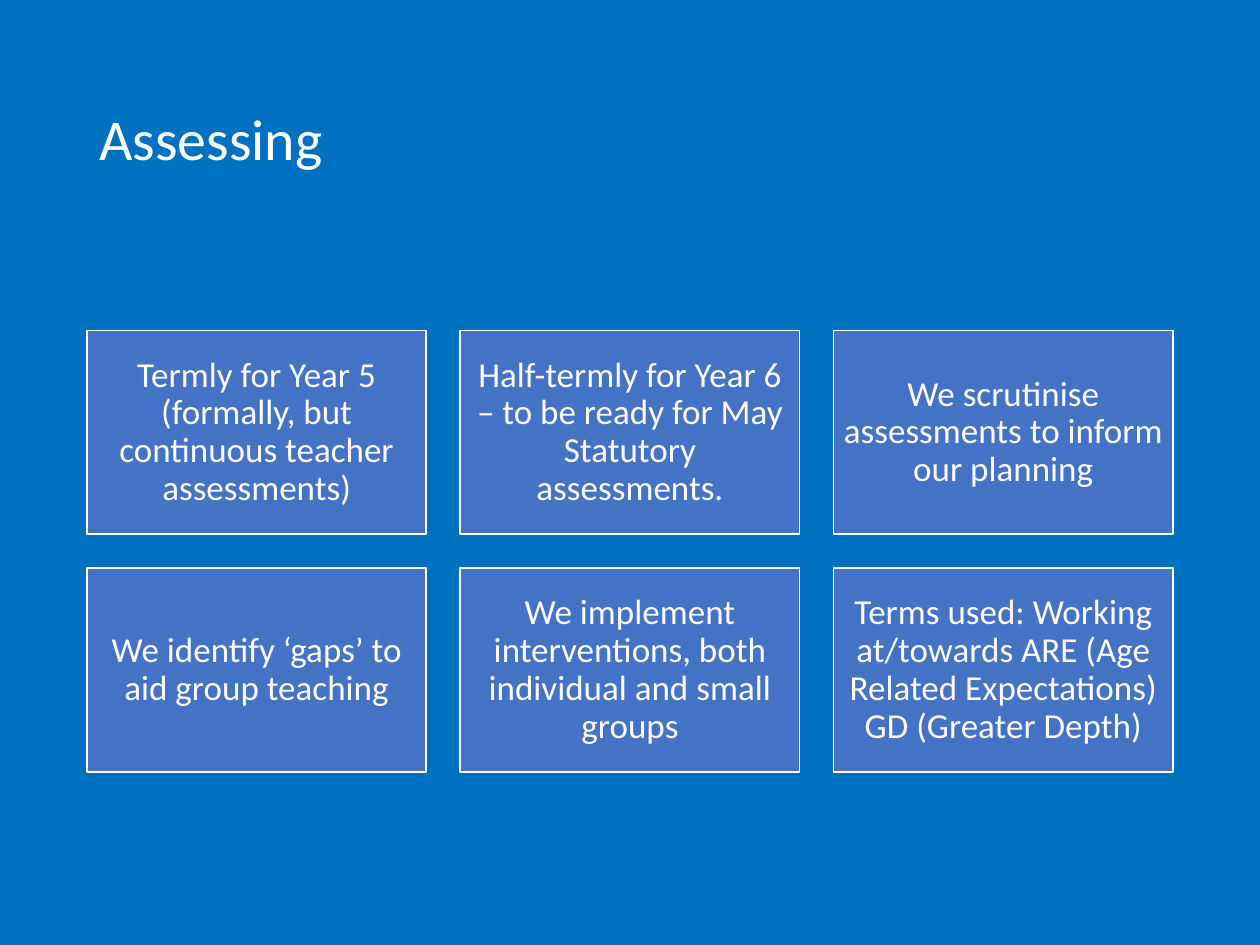
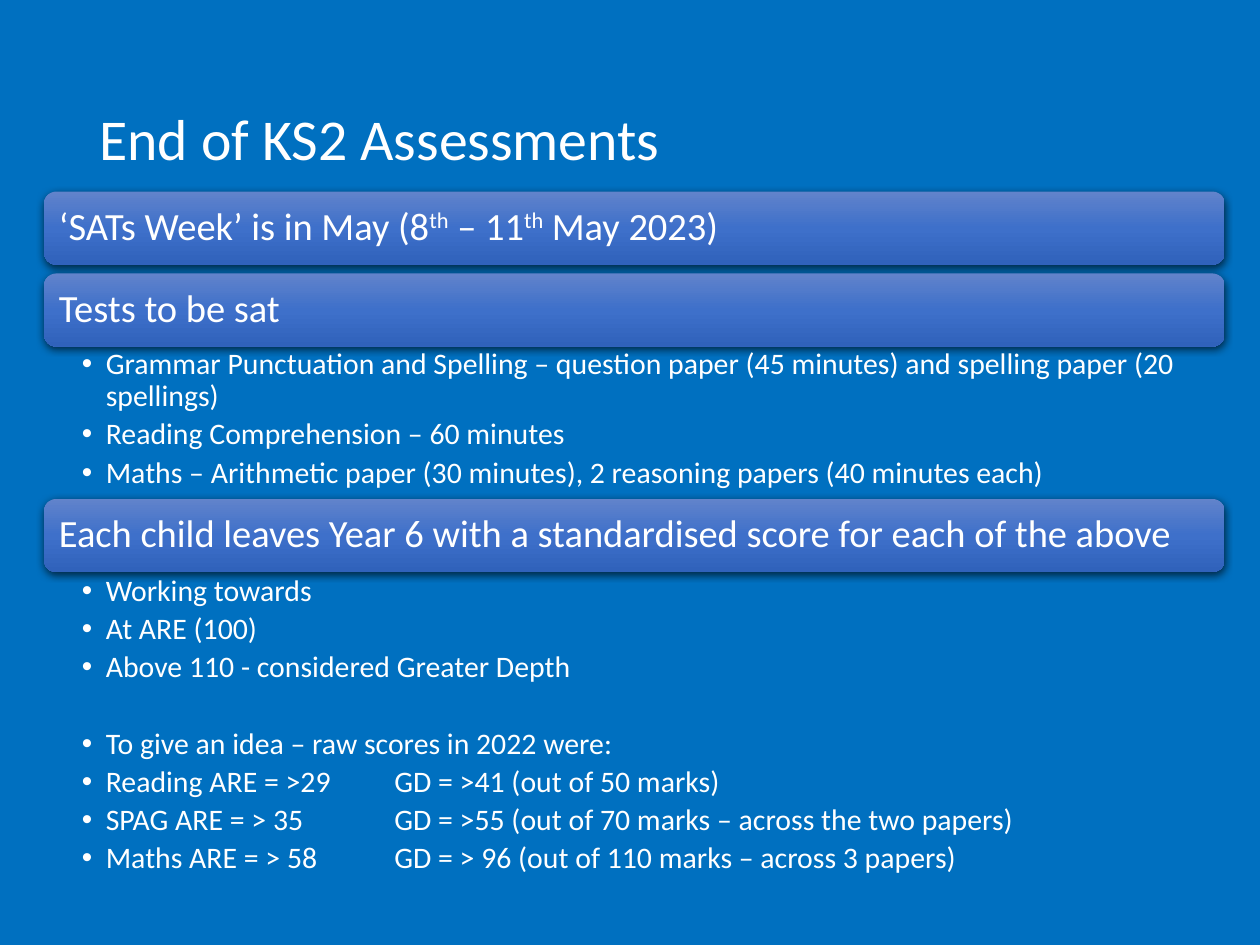
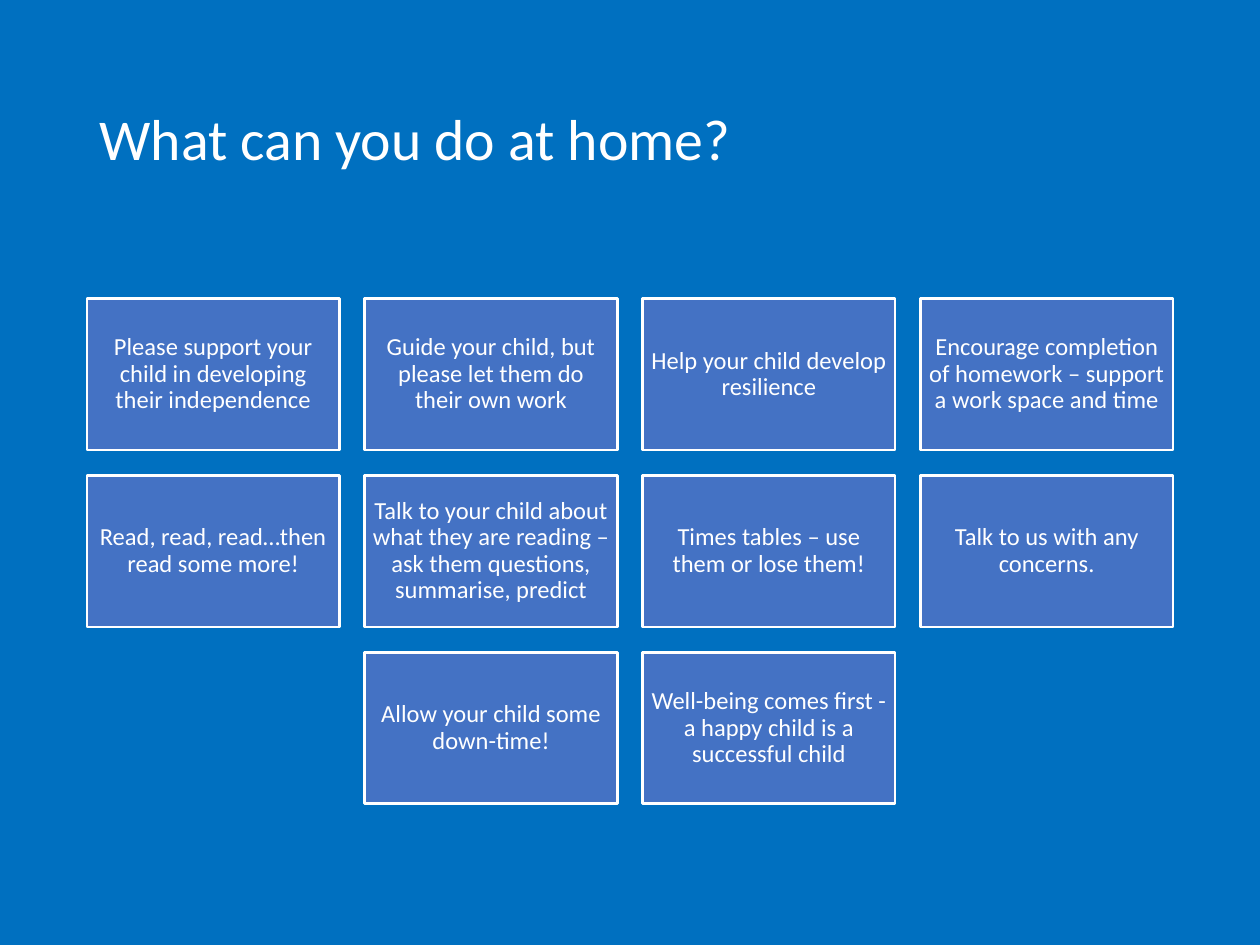
from lxml.etree import SubElement
from pptx import Presentation
from pptx.dml.color import RGBColor
from pptx.enum.shapes import MSO_SHAPE as Shape
from pptx.enum.text import MSO_ANCHOR as Anchor, PP_ALIGN as Align
from pptx.oxml.ns import qn
from pptx.util import Inches, Pt

BACKGROUND = RGBColor(0x00, 0x70, 0xC0)
CARD = RGBColor(0x44, 0x72, 0xC4)
WHITE = RGBColor(0xFF, 0xFF, 0xFF)
SHADOW = RGBColor(0x00, 0x00, 0x00)
BAR_GRADIENT = [
    (0, RGBColor(0x61, 0x83, 0xCB)),
    (50, RGBColor(0x3E, 0x70, 0xCA)),
    (100, RGBColor(0x30, 0x62, 0xBB)),
]
FONT = "Calibri"

CONTENT_LEFT, CONTENT_WIDTH = 0.69, 8.62
GRID_MIDDLE = 4.375
LIST_LEFT, LIST_WIDTH = 0.35, 9.37
BAR_HEIGHT = 0.58
BULLET_INDENT = 0.19
SCORE_TAB = 2.29

ASSESSING = [
    "Termly for Year 5 (formally, but continuous teacher assessments)",
    "Half-termly for Year 6 – to be ready for May Statutory assessments.",
    "We scrutinise assessments to inform our planning",
    "We identify ‘gaps’ to aid group teaching",
    "We implement interventions, both individual and small groups",
    "Terms used: Working at/towards ARE (Age Related Expectations) GD (Greater Depth)",
]
TESTS = [
    "Grammar Punctuation and Spelling – question paper (45 minutes) and spelling paper (20 spellings)",
    "Reading Comprehension – 60 minutes",
    "Maths – Arithmetic paper (30 minutes), 2 reasoning papers (40 minutes each)",
]
SCORES = [
    "Working towards",
    "At ARE (100)",
    "Above 110 - considered Greater Depth",
    "To give an idea – raw scores in 2022 were:",
    "Reading ARE = >29 \tGD = >41 (out of 50 marks)",
    "SPAG ARE = > 35\tGD = >55 (out of 70 marks – across the two papers)",
    "Maths ARE = > 58\tGD = > 96 (out of 110 marks – across 3 papers)",
]
AT_HOME = [
    "Please support your child in developing their independence",
    "Guide your child, but please let them do their own work",
    "Help your child develop resilience",
    "Encourage completion of homework – support a work space and time",
    "Read, read, read…then read some more!",
    "Talk to your child about what they are reading – ask them questions, summarise, predict",
    "Times tables – use them or lose them!",
    "Talk to us with any concerns.",
    "Allow your child some down-time!",
    "Well-being comes first - a happy child is a successful child",
]


class Deck:
    def __init__(self):
        self.presentation = Presentation()
        self.presentation.slide_width = Inches(10)
        self.presentation.slide_height = Inches(7.5)
        self.slide = None

    def add_slide(self, title):
        self.slide = self.presentation.slides.add_slide(self.presentation.slide_layouts[6])
        fill = self.slide.background.fill
        fill.solid()
        fill.fore_color.rgb = BACKGROUND
        frame = self.text_box(CONTENT_LEFT, 0.4, CONTENT_WIDTH, 1.45, (0.1, 0.05, 0.1, 0.05))
        frame.vertical_anchor = Anchor.MIDDLE
        frame.text = title
        self.format(frame.paragraphs[0], 33)

    def text_box(self, left, top, width, height, insets):
        box = self.slide.shapes.add_textbox(
            Inches(left), Inches(top), Inches(width), Inches(height))
        self.set_insets(box.text_frame, *insets)
        return box.text_frame

    def shape(self, kind, left, top, width, height, inset):
        shape = self.slide.shapes.add_shape(
            kind, Inches(left), Inches(top), Inches(width), Inches(height))
        shape.shadow.inherit = False
        shape.text_frame.vertical_anchor = Anchor.MIDDLE
        self.set_insets(shape.text_frame, inset, inset, inset, inset)
        return shape

    def set_insets(self, frame, left, top, right, bottom):
        frame.word_wrap = True
        frame.margin_left, frame.margin_top = Inches(left), Inches(top)
        frame.margin_right, frame.margin_bottom = Inches(right), Inches(bottom)

    def format(self, paragraph, size, align=Align.LEFT, after=0):
        """Style a paragraph; after is the space below as a share of the text size."""
        paragraph.alignment = align
        paragraph.line_spacing = 0.9
        paragraph.space_after = Pt(size * after)
        for run in paragraph.runs:
            run.font.name = FONT
            run.font.size = Pt(size)
            run.font.color.rgb = WHITE

    def card_grid(self, texts, columns, size, inset, line_width):
        """Fill rows of cards; a short last row is centred."""
        width = CONTENT_WIDTH / (columns + 0.1 * (columns - 1))
        height, gap = 0.6 * width, 0.1 * width
        rows = [texts[start:start + columns] for start in range(0, len(texts), columns)]
        top = GRID_MIDDLE - (len(rows) * (height + gap) - gap) / 2
        for row in rows:
            left = CONTENT_LEFT + (columns - len(row)) * (width + gap) / 2
            for text in row:
                card = self.shape(Shape.RECTANGLE, left, top, width, height, inset)
                card.fill.solid()
                card.fill.fore_color.rgb = CARD
                card.line.color.rgb = WHITE
                card.line.width = Pt(line_width)
                card.text_frame.text = text
                self.format(card.text_frame.paragraphs[0], size, Align.CENTER, 0.35)
                left += width + gap
            top += height + gap

    def bar(self, top, *parts):
        """Draw a heading bar; every second part of its text is superscript."""
        bar = self.shape(Shape.ROUNDED_RECTANGLE, LIST_LEFT, top, LIST_WIDTH, BAR_HEIGHT, 0.09)
        bar.line.fill.background()
        self.fill_gradient(bar)
        self.cast_shadow(bar)
        paragraph = bar.text_frame.paragraphs[0]
        for index, part in enumerate(parts):
            run = paragraph.add_run()
            run.text = part
            if index % 2:
                run._r.get_or_add_rPr().set("baseline", "30000")
        self.format(paragraph, 22, after=0.35)

    def fill_gradient(self, shape):
        shape.fill.gradient()
        shape.fill.gradient_angle = 270
        stops = shape._element.spPr.find(qn("a:gradFill")).find(qn("a:gsLst"))
        stops.clear()
        for position, color in BAR_GRADIENT:
            stop = SubElement(stops, qn("a:gs"), pos=str(position * 1000))
            SubElement(stop, qn("a:srgbClr"), val=str(color))

    def cast_shadow(self, shape):
        effects = shape._element.spPr.find(qn("a:effectLst"))
        shadow = SubElement(effects, qn("a:outerShdw"), blurRad=str(Pt(4.5)),
                            dist=str(Pt(1.5)), dir="5400000", rotWithShape="0")
        color = SubElement(shadow, qn("a:srgbClr"), val=str(SHADOW))
        SubElement(color, qn("a:alpha"), val="63000")

    def bullets(self, top, height, texts, gap_before=None):
        """List the texts; gap_before is the index of the one that opens a new block."""
        frame = self.text_box(LIST_LEFT, top, LIST_WIDTH, height, (0.3, 0.03, 0.17, 0.03))
        for index, text in enumerate(texts):
            paragraph = frame.add_paragraph() if index else frame.paragraphs[0]
            paragraph.text = text
            self.format(paragraph, 17, after=0.2)
            if index == gap_before:
                paragraph.space_before = Pt(22)
            properties = paragraph._p.get_or_add_pPr()
            properties.set("marL", str(Inches(BULLET_INDENT)))
            properties.set("indent", str(Inches(-BULLET_INDENT)))
            SubElement(properties, qn("a:buFont"), typeface="Arial")
            SubElement(properties, qn("a:buChar"), char="•")
            if "\t" in text:
                tabs = SubElement(properties, qn("a:tabLst"))
                SubElement(tabs, qn("a:tab"), pos=str(Inches(SCORE_TAB + BULLET_INDENT)), algn="l")


def main():
    deck = Deck()

    deck.add_slide("Assessing")
    deck.card_grid(ASSESSING, columns=3, size=20, inset=0.08, line_width=1)

    deck.add_slide("End of KS2 Assessments")
    deck.bar(1.52, "‘SATs Week’ is in May (8", "th", " – 11", "th", " May 2023)")
    deck.bar(2.17, "Tests to be sat")
    deck.bullets(2.74, 1.22, TESTS)
    deck.bar(3.96, "Each child leaves Year 6 with a standardised score for each of the above")
    deck.bullets(4.54, 2.54, SCORES, gap_before=3)

    deck.add_slide("What can you do at home?")
    deck.card_grid(AT_HOME, columns=4, size=14, inset=0.06, line_width=1.5)

    deck.presentation.save("out.pptx")


if __name__ == "__main__":
    main()
